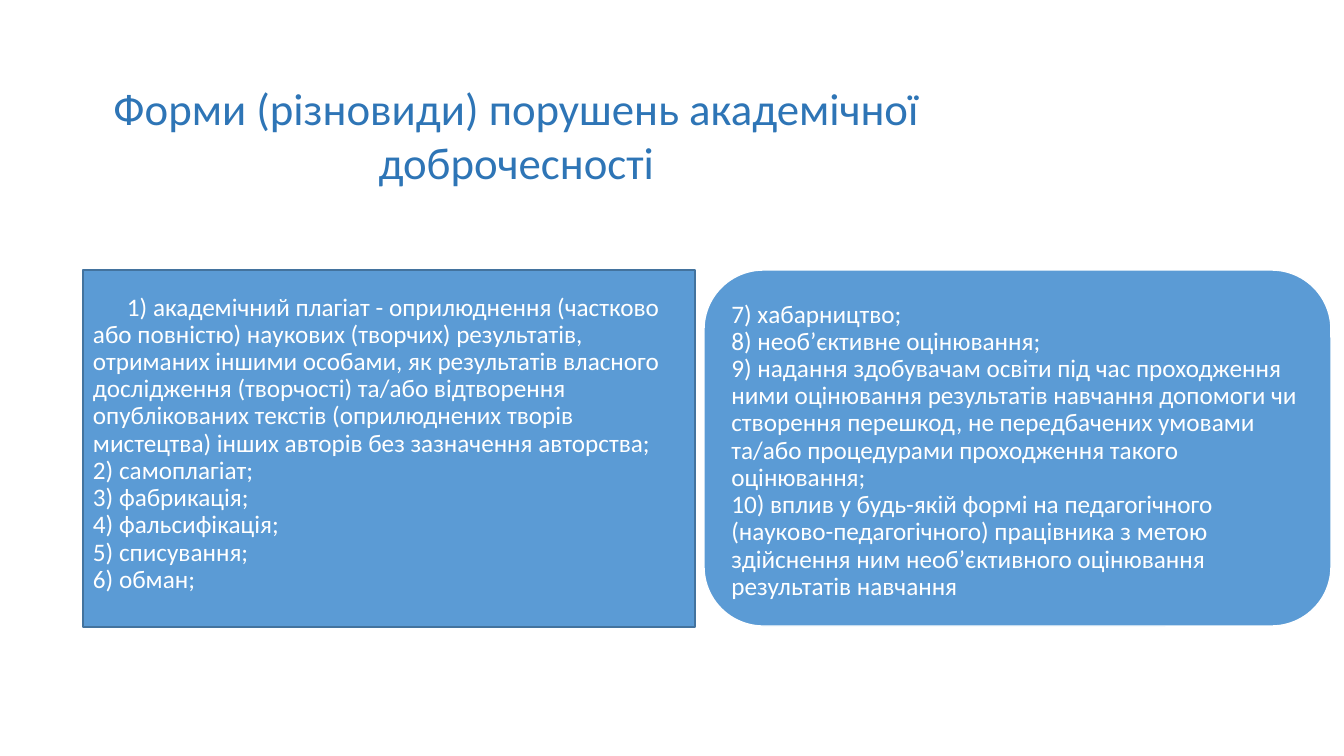
from pptx import Presentation
from pptx.dml.color import RGBColor
from pptx.enum.shapes import MSO_SHAPE
from pptx.enum.text import MSO_ANCHOR, PP_ALIGN
from pptx.util import Emu, Pt

RECTANGLE = MSO_SHAPE.RECTANGLE
ROUNDED = MSO_SHAPE.ROUNDED_RECTANGLE
MIDDLE, TOP = MSO_ANCHOR.MIDDLE, MSO_ANCHOR.TOP
LEFT, CENTER = PP_ALIGN.LEFT, PP_ALIGN.CENTER

TITLE = "Форми (різновиди) порушень академічної доброчесності"
FIRST_VIOLATIONS = [
    "1) академічний плагіат - оприлюднення (частково або повністю) наукових "
    "(творчих) результатів, отриманих іншими особами, як результатів власного "
    "дослідження (творчості) та/або відтворення опублікованих текстів "
    "(оприлюднених творів мистецтва) інших авторів без зазначення авторства;",
    "2) самоплагіат;",
    "3) фабрикація;",
    "4) фальсифікація;",
    "5) списування;",
    "6) обман;",
]
OTHER_VIOLATIONS = [
    "7) хабарництво;",
    "8) необ’єктивне оцінювання;",
    "9) надання здобувачам освіти під час проходження ними оцінювання "
    "результатів навчання допомоги чи створення перешкод, не передбачених "
    "умовами та/або процедурами проходження такого оцінювання;",
    "10) вплив у будь-якій формі на педагогічного (науково-педагогічного) "
    "працівника з метою здійснення ним необ’єктивного оцінювання результатів "
    "навчання",
]


def px(length):
    return Emu(round(length * 914400 / 100.8))


def color(value):
    return RGBColor.from_string(value)


class ViolationsSlide:
    """Draws styled elements on one slide."""

    font = "Calibri"
    blue = "5B9BD5"
    white = "FFFFFF"
    title_blue = "2E75B6"

    def __init__(self, presentation):
        self.slide = presentation.slides.add_slide(presentation.slide_layouts[6])

    def set_text(self, shape, lines, size, text_color, align, anchor, spacing, insets):
        frame = shape.text_frame
        frame.word_wrap = True
        frame.vertical_anchor = anchor
        frame.margin_left = frame.margin_right = px(10)
        frame.margin_top, frame.margin_bottom = map(px, insets)
        frame.text = "\n".join(lines)
        for paragraph in frame.paragraphs:
            paragraph.alignment = align
            paragraph.line_spacing = spacing
            for run in paragraph.runs:
                run.font.name = self.font
                run.font.size = Pt(size)
                run.font.color.rgb = color(text_color)

    def title(self, text, left, top, width, height):
        box = self.slide.shapes.add_textbox(*map(px, (left, top, width, height)))
        self.set_text(box, [text], 32, self.title_blue, CENTER, TOP, 1.0, (5, 5))

    def panel(self, kind, lines, left, top, width, height, outline, insets):
        shape = self.slide.shapes.add_shape(
            kind, *map(px, (left, top, width, height)))
        shape.shadow.inherit = False
        shape.fill.solid()
        shape.fill.fore_color.rgb = color(self.blue)
        shape.line.color.rgb = color(outline)
        shape.line.width = Pt(1)
        self.set_text(shape, lines, 18, self.white, LEFT, MIDDLE, 0.9, insets)
        return shape


def main():
    presentation = Presentation()
    presentation.slide_width = px(1344)
    presentation.slide_height = px(756)
    slide = ViolationsSlide(presentation)
    first = slide.panel(RECTANGLE, FIRST_VIOLATIONS, 83, 270, 612, 357,
                        "43739E", (5, 14))
    properties = first.text_frame.paragraphs[0]._p.get_or_add_pPr()
    properties.set("indent", str(px(34)))
    slide.panel(ROUNDED, OTHER_VIOLATIONS, 704, 270, 627, 356,
                slide.white, (10, 4))
    slide.title(TITLE, 0, 76, 1033, 119)
    presentation.save("out.pptx")


if __name__ == "__main__":
    main()
